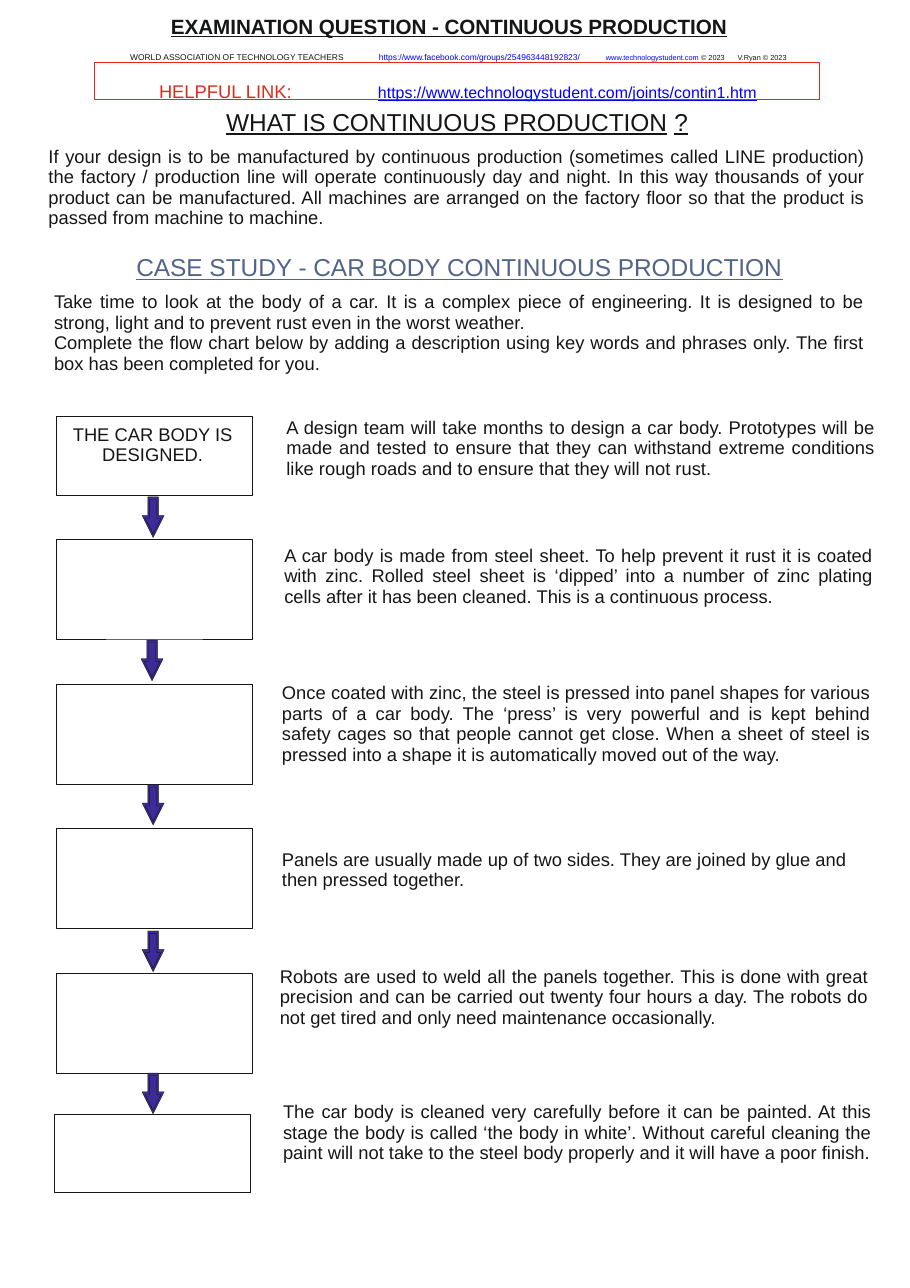
from lxml import etree
from pptx import Presentation
from pptx.dml.color import RGBColor
from pptx.enum.shapes import MSO_SHAPE
from pptx.enum.text import MSO_ANCHOR, MSO_AUTO_SIZE, PP_ALIGN
from pptx.oxml.ns import qn
from pptx.util import Pt

INK = RGBColor(0x15, 0x16, 0x16)
RED = RGBColor(0xDD, 0x2B, 0x1C)
LINK_BLUE = RGBColor(0x00, 0x00, 0xFF)
SLATE = RGBColor(0x52, 0x64, 0x8A)
INDIGO = RGBColor(0x3C, 0x2B, 0x98)

RECTANGLE, DOWN_ARROW = MSO_SHAPE.RECTANGLE, MSO_SHAPE.DOWN_ARROW
LEFT, CENTER, JUSTIFY = PP_ALIGN.LEFT, PP_ALIGN.CENTER, PP_ALIGN.JUSTIFY
TOP, NO_AUTOFIT = MSO_ANCHOR.TOP, MSO_AUTO_SIZE.NONE

FONT = "Arial"
BODY_SIZE = 12
BODY_LEADING = 13.4
TITLE_ONLY = 5

INTRODUCTION = [
    "If your design is to be manufactured by continuous production (sometimes called "
    "LINE production) the factory / production line will operate continuously day and "
    "night. In this way thousands of your product can be manufactured. All machines are "
    "arranged on the factory floor so that the product is passed from machine to machine.",
]
CASE_STUDY = [
    "Take time to look at the body of a car. It is a complex piece of engineering. It is "
    "designed to be strong, light and to prevent rust even in the worst weather.",
    "Complete the flow chart below by adding a description using key words and phrases "
    "only. The first box has been completed for you.",
]

# Box (left, top, height), label, description (left, top, alignment), description text
STEPS = [
    ((36.7, 272.2, 51.1), "THE CAR BODY IS DESIGNED.", (187.2, 272.9, JUSTIFY),
     "A design team will take months to design a car body. Prototypes will be made and "
     "tested to ensure that they can withstand extreme conditions like rough roads and "
     "to ensure that they will not rust."),
    ((36.7, 352.1, 65.5), "", (185.8, 356.4, JUSTIFY),
     "A car body is made from steel sheet. To help prevent it rust it is coated with "
     "zinc. Rolled steel sheet is ‘dipped’ into a number of zinc plating cells after it "
     "has been cleaned. This is a continuous process."),
    ((36.7, 447.1, 65.5), "", (184.3, 446.4, JUSTIFY),
     "Once coated with zinc, the steel is pressed into panel shapes for various parts of "
     "a car body. The ‘press’ is very powerful and is kept behind safety cages so that "
     "people cannot get close. When a sheet of steel is pressed into a shape it is "
     "automatically moved out of the way."),
    ((36.7, 541.4, 65.5), "", (184.3, 555.1, LEFT),
     "Panels are usually made up of two sides. They are joined by glue and then pressed "
     "together."),
    ((36.7, 635.8, 65.5), "", (182.9, 631.4, JUSTIFY),
     "Robots are used to weld all the panels together. This is done with great precision "
     "and can be carried out twenty four hours a day. The robots do not get tired and "
     "only need maintenance occasionally."),
    ((35.3, 727.9, 51.1), "", (185, 720, JUSTIFY),
     "The car body is cleaned very carefully before it can be painted. At this stage the "
     "body is called ‘the body in white’. Without careful cleaning the paint will not "
     "take to the steel body properly and it will have a poor finish."),
]
BOX_WIDTH = 128.2
DESCRIPTION_WIDTH = 385
ARROWS = [(92.9, 324.7), (92.2, 418.3), (92.9, 512.6), (92.9, 608.4), (92.9, 701.3)]


def place(box):
    return [Pt(length) for length in box]


def prepare_frame(shape, left=0, top=0, right=0):
    frame = shape.text_frame
    frame.word_wrap = True
    frame.auto_size = NO_AUTOFIT
    frame.vertical_anchor = TOP
    frame.margin_left, frame.margin_top = Pt(left), Pt(top)
    frame.margin_right, frame.margin_bottom = Pt(right), 0
    return frame


def add_text_frame(slide, box):
    return prepare_frame(slide.shapes.add_textbox(*place(box)))


def style_font(font, size, color=INK, underline=False, bold=False):
    font.name, font.size = FONT, Pt(size)
    font.color.rgb = color
    font.underline, font.bold = underline, bold


def style_body(paragraph, text, alignment):
    paragraph.text = text
    paragraph.alignment = alignment
    paragraph.line_spacing = Pt(BODY_LEADING)
    style_font(paragraph.font, BODY_SIZE)


def add_run(paragraph, text, *style):
    run = paragraph.add_run()
    run.text = text
    style_font(run.font, *style)


def set_tabs(paragraph, positions):
    tab_list = etree.SubElement(paragraph._p.get_or_add_pPr(), qn("a:tabLst"))
    for position in positions:
        etree.SubElement(tab_list, qn("a:tab"), pos=str(Pt(position)), algn="l")


def add_outlined(slide, kind, box, line_color=INK, line_width=0.25, fill=None):
    shape = slide.shapes.add_shape(kind, *place(box))
    shape.shadow.inherit = False
    shape.line.color.rgb = line_color
    shape.line.width = Pt(line_width)
    if fill is None:
        shape.fill.background()
    else:
        shape.fill.solid()
        shape.fill.fore_color.rgb = fill
    return shape


def add_title(slide, box):
    title = slide.shapes.title
    title.left, title.top, title.width, title.height = place(box)
    paragraph = prepare_frame(title).paragraphs[0]
    paragraph.text = "EXAMINATION QUESTION - CONTINUOUS PRODUCTION"
    paragraph.alignment = LEFT
    style_font(paragraph.font, 13.5, INK, True, True)


def add_credits(slide, box):
    paragraph = add_text_frame(slide, box).paragraphs[0]
    set_tabs(paragraph, [162.6, 311, 397])
    add_run(paragraph, "WORLD ASSOCIATION OF TECHNOLOGY TEACHERS\t", 5.5)
    add_run(paragraph, "https://www.facebook.com/groups/254963448192823/", 5.5, LINK_BLUE, True)
    add_run(paragraph, "\t", 5.5)
    add_run(paragraph, "www.technologystudent.com", 4.8, LINK_BLUE, True)
    add_run(paragraph, " © 2023\tV.Ryan © 2023", 4.8)


def add_helpful_link(slide, box):
    shape = add_outlined(slide, RECTANGLE, box, RED, 0.57)
    paragraph = prepare_frame(shape, left=42, top=11.5).paragraphs[0]
    paragraph.alignment = LEFT
    set_tabs(paragraph, [143.1])
    add_run(paragraph, "HELPFUL LINK:\t", BODY_SIZE, RED)
    add_run(paragraph, "https://www.technologystudent.com/joints/contin1.htm",
            10.4, LINK_BLUE, True)


def add_section(slide, box, heading_parts, color, texts, heading_margin):
    """Centre the heading in the box less heading_margin on the right, then justify the texts."""
    frame = add_text_frame(slide, box)
    heading = frame.paragraphs[0]
    heading.alignment = CENTER
    heading._p.get_or_add_pPr().set("marR", str(Pt(heading_margin)))
    for text, underline in heading_parts:
        add_run(heading, text, 16, color, underline)
    for index, text in enumerate(texts):
        paragraph = frame.add_paragraph()
        style_body(paragraph, text, JUSTIFY)
        paragraph.space_before = Pt(0 if index else 6.8)


def add_step(slide, box, label, description_place, description):
    left, top, height = box
    shape = add_outlined(slide, RECTANGLE, (left, top, BOX_WIDTH, height))
    if label:
        frame = prepare_frame(shape, left=9, top=5.1, right=11)
        style_body(frame.paragraphs[0], label, CENTER)
    left, top, alignment = description_place
    frame = add_text_frame(slide, (left, top, DESCRIPTION_WIDTH, 54))
    style_body(frame.paragraphs[0], description, alignment)


def add_step_arrow(slide, left, top):
    """Draw a block arrow with a smaller one inside it."""
    for box in ((left, top, 14.4, 26.6), (left + 2.1, top + 1.7, 10.2, 22.6)):
        arrow = add_outlined(slide, DOWN_ARROW, box, fill=INDIGO)
        arrow.adjustments[0], arrow.adjustments[1] = 0.48, 1


def main():
    presentation = Presentation()
    presentation.slide_width, presentation.slide_height = Pt(594.72), Pt(841.68)
    slide = presentation.slides.add_slide(presentation.slide_layouts[TITLE_ONLY])
    add_title(slide, (111.7, 9, 400, 18))
    add_credits(slide, (85, 34.3, 445, 7))
    add_helpful_link(slide, (61.9, 41, 473.8, 23.8))
    add_section(slide, (31.7, 69.8, 542, 84),
                [("WHAT IS CONTINUOUS PRODUCTION", True), (" ", False), ("?", True)],
                INK, INTRODUCTION, 8)
    add_section(slide, (35.3, 164.8, 541, 84),
                [("CASE STUDY - CAR BODY CONTINUOUS PRODUCTION", True)],
                SLATE, CASE_STUDY, 11)
    for step in STEPS:
        add_step(slide, *step)
    for left, top in ARROWS:
        add_step_arrow(slide, left, top)
    presentation.save("out.pptx")


if __name__ == "__main__":
    main()
